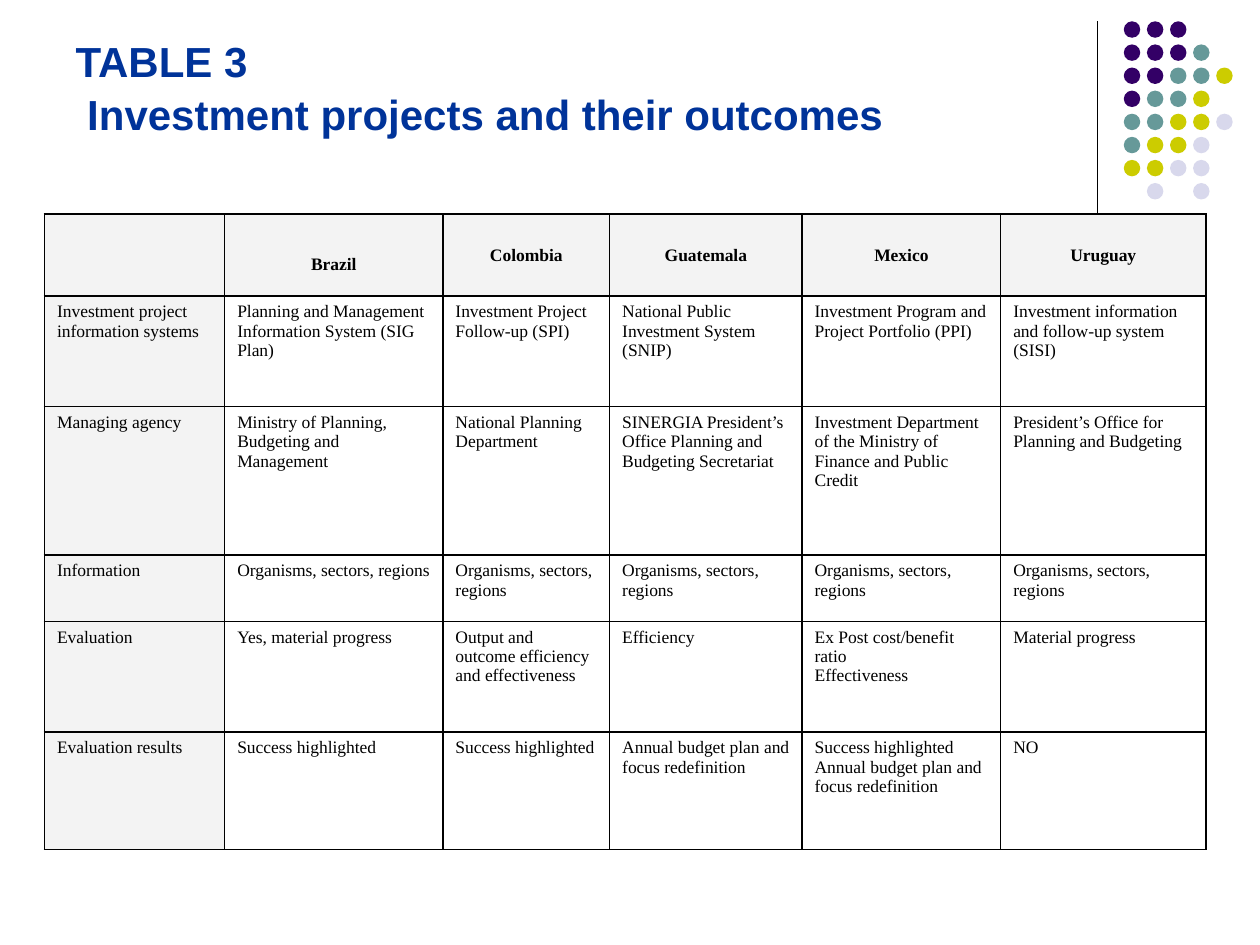
from dataclasses import dataclass
from typing import NamedTuple

from lxml import etree
from pptx import Presentation
from pptx.dml.color import RGBColor
from pptx.enum import shapes, text
from pptx.oxml import ns
from pptx.util import Pt


@dataclass(frozen=True)
class Theme:
    title: str = "003399"
    ink: str = "000000"
    header: str = "F3F3F3"
    purple: str = "330066"
    teal: str = "669999"
    lime: str = "CCCC00"
    lilac: str = "D8D8EC"
    title_font: str = "Arial"
    table_font: str = "Times New Roman"
    title_size: float = 24
    table_size: float = 10


class Dot(NamedTuple):
    row: int
    col: int
    color: str


class Entry(NamedTuple):
    row: int
    col: int
    text: str

    @property
    def is_header(self) -> bool:
        return self.row == 0

    @property
    def is_shaded(self) -> bool:
        return self.row == 0 or self.col == 0


THEME = Theme()

DOT_ROWS = ["PPP", "PPPT", "PPTTL", "PTTL", "TTLLG", "TLLG", "LLGG", " G G"]
DOT_COLORS = {"P": THEME.purple, "T": THEME.teal, "L": THEME.lime, "G": THEME.lilac}
DOT_LEFT, DOT_TOP, DOT_STEP, DOT_SIZE = 642.2, 12.2, 13.2, 9.4

COL_WIDTHS = [103, 124.7, 95.3, 110, 113.5, 117.2]
ROW_HEIGHTS = [46.8, 63.2, 84.8, 38, 63.2, 67]
ROWS = [
    ["", "Brazil", "Colombia", "Guatemala", "Mexico", "Uruguay"],
    [
        "Investment project information systems",
        "Planning and Management Information System (SIG Plan)",
        "Investment Project Follow-up (SPI)",
        "National Public Investment System (SNIP)",
        "Investment Program and Project Portfolio (PPI)",
        "Investment information and follow-up system (SISI)",
    ],
    [
        "Managing agency",
        "Ministry of Planning, Budgeting and Management",
        "National Planning Department",
        "SINERGIA President’s Office Planning and Budgeting Secretariat",
        "Investment Department of the Ministry of Finance and Public Credit",
        "President’s Office for Planning and Budgeting",
    ],
    ["Information"] + ["Organisms, sectors, regions"] * 5,
    [
        "Evaluation",
        "Yes, material progress",
        "Output and outcome efficiency and effectiveness",
        "Efficiency",
        "Ex Post cost/benefit ratio\nEffectiveness",
        "Material progress",
    ],
    [
        "Evaluation results",
        "Success highlighted",
        "Success highlighted",
        "Annual budget plan and focus redefinition",
        "Success highlighted\nAnnual budget plan and focus redefinition",
        "NO",
    ],
]


def write(tf, content: str, *, font: str, size: float, color: str, bold: bool = False,
          align=text.PP_ALIGN.LEFT, spacing: float = 1.0) -> None:
    for i, line in enumerate(content.split("\n")):
        p = tf.paragraphs[0] if i == 0 else tf.add_paragraph()
        p.alignment = align
        p.line_spacing = spacing
        r = p.add_run()
        r.text = line
        r.font.name = font
        r.font.size = Pt(size)
        r.font.bold = bold
        r.font.color.rgb = RGBColor.from_string(color)


def draw_title(sp) -> None:
    sp.left, sp.top, sp.width, sp.height = Pt(36), Pt(9.4), Pt(594), Pt(102.2)
    tf = sp.text_frame
    tf.word_wrap = True
    tf.auto_size = text.MSO_AUTO_SIZE.NONE
    tf.vertical_anchor = text.MSO_ANCHOR.BOTTOM
    tf.margin_bottom = Pt(32.4)
    write(tf, "TABLE 3\n Investment projects and their outcomes", font=THEME.title_font,
          size=THEME.title_size, color=THEME.title, bold=True, spacing=1.05)


def draw_rule(slide) -> None:
    line = slide.shapes.add_connector(
        shapes.MSO_CONNECTOR.STRAIGHT, Pt(627.1), Pt(12.2), Pt(627.1), Pt(131.8))
    line.line.color.rgb = RGBColor.from_string(THEME.ink)
    line.line.width = Pt(0.75)
    etree.SubElement(line._element.spPr, ns.qn("a:effectLst"))


def draw_dot(group, dot: Dot) -> None:
    sp = group.shapes.add_shape(
        shapes.MSO_SHAPE.OVAL, Pt(DOT_LEFT + dot.col * DOT_STEP),
        Pt(DOT_TOP + dot.row * DOT_STEP), Pt(DOT_SIZE), Pt(DOT_SIZE))
    sp.shadow.inherit = False
    sp.fill.solid()
    sp.fill.fore_color.rgb = RGBColor.from_string(dot.color)
    sp.line.fill.background()


def add_borders(cell, color: str, width: float) -> None:
    tc_pr = cell._tc.get_or_add_tcPr()
    for i, side in enumerate(("lnL", "lnR", "lnT", "lnB")):
        ln = etree.Element(ns.qn(f"a:{side}"), w=str(Pt(width)))
        fill = etree.SubElement(ln, ns.qn("a:solidFill"))
        etree.SubElement(fill, ns.qn("a:srgbClr"), val=color)
        tc_pr.insert(i, ln)


def draw_entry(table, entry: Entry) -> None:
    cell = table.cell(entry.row, entry.col)
    if entry.is_shaded:
        cell.fill.solid()
        cell.fill.fore_color.rgb = RGBColor.from_string(THEME.header)
    else:
        cell.fill.background()
    add_borders(cell, THEME.ink, 1)
    if entry.is_header:
        cell.vertical_anchor = text.MSO_ANCHOR.MIDDLE
    if entry.text == "Brazil":
        cell.margin_top = Pt(15)
    if entry.text:
        align = text.PP_ALIGN.CENTER if entry.is_header else text.PP_ALIGN.LEFT
        write(cell.text_frame, entry.text, font=THEME.table_font, size=THEME.table_size,
              color=THEME.ink, bold=entry.is_header, align=align)


def draw_table(slide) -> None:
    table = slide.shapes.add_table(
        len(ROWS), len(COL_WIDTHS), Pt(25.4), Pt(122.4),
        Pt(sum(COL_WIDTHS)), Pt(sum(ROW_HEIGHTS))).table
    table.first_row = table.horz_banding = False
    for column, width in zip(table.columns, COL_WIDTHS):
        column.width = Pt(width)
    for row, height in zip(table.rows, ROW_HEIGHTS):
        row.height = Pt(height)
    for i, row in enumerate(ROWS):
        for j, content in enumerate(row):
            draw_entry(table, Entry(i, j, content))


def main() -> None:
    prs = Presentation()
    prs.slide_width, prs.slide_height = Pt(720), Pt(540)
    slide = prs.slides.add_slide(prs.slide_layouts[5])
    draw_rule(slide)
    group = slide.shapes.add_group_shape()
    for i, row in enumerate(DOT_ROWS):
        for j, key in enumerate(row):
            if key in DOT_COLORS:
                draw_dot(group, Dot(i, j, DOT_COLORS[key]))
    draw_title(slide.shapes.title)
    draw_table(slide)
    prs.save("out.pptx")


if __name__ == "__main__":
    main()
